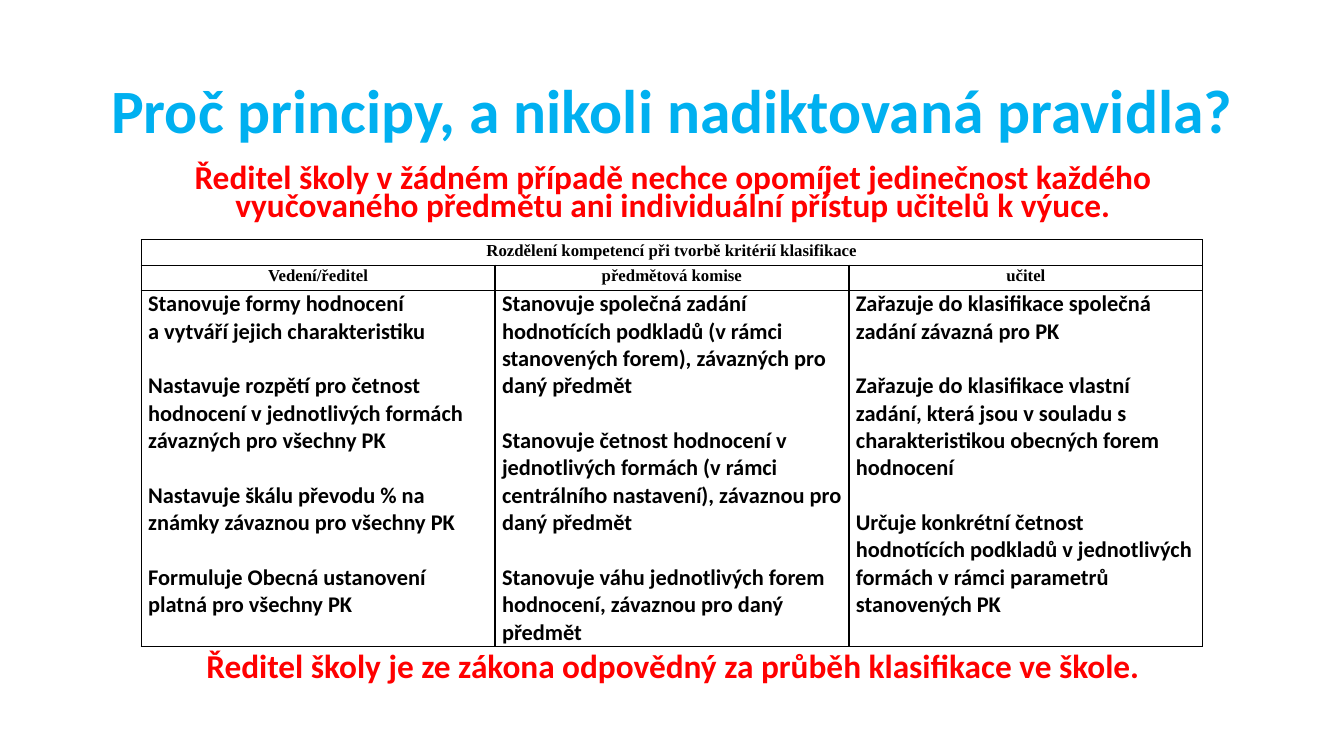
from lxml.etree import SubElement
from pptx import Presentation
from pptx.dml.color import RGBColor
from pptx.enum.text import MSO_ANCHOR, PP_ALIGN
from pptx.oxml.ns import qn
from pptx.util import Inches, Pt

BLUE = RGBColor(0x00, 0xB0, 0xF0)
RED = RGBColor(0xFF, 0x00, 0x00)
BLACK = RGBColor(0x00, 0x00, 0x00)

TITLE = "Proč principy, a nikoli nadiktovaná pravidla?"
INTRO = ("Ředitel školy v žádném případě nechce opomíjet jedinečnost každého "
         "vyučovaného předmětu ani individuální přístup učitelů k výuce.")
CLOSE = "Ředitel školy je ze zákona odpovědný za průběh klasifikace ve škole."
CAPTION = "Rozdělení kompetencí při tvorbě kritérií klasifikace"
ROLES = [
    ("Vedení/ředitel", [
        "Stanovuje formy hodnocení \va vytváří jejich charakteristiku",
        "Nastavuje rozpětí pro četnost hodnocení v jednotlivých formách závazných pro všechny PK",
        "Nastavuje škálu převodu % na známky závaznou pro všechny PK",
        "Formuluje Obecná ustanovení platná pro všechny PK",
    ]),
    ("předmětová komise", [
        "Stanovuje společná zadání hodnotících podkladů (v rámci stanovených forem), závazných pro daný předmět",
        "Stanovuje četnost hodnocení v jednotlivých formách (v rámci centrálního nastavení), závaznou pro daný předmět",
        "Stanovuje váhu jednotlivých forem hodnocení, závaznou pro daný předmět",
    ]),
    ("učitel", [
        "Zařazuje do klasifikace společná zadání závazná pro PK",
        "Zařazuje do klasifikace vlastní zadání, která jsou v souladu s charakteristikou obecných forem hodnocení",
        "Určuje konkrétní četnost hodnotících podkladů v jednotlivých formách v rámci parametrů stanovených PK",
    ]),
]

HEAD = ({"name": "Calibri", "size": Pt(44), "bold": True}, BLUE,
        {"alignment": PP_ALIGN.CENTER, "line_spacing": 0.9})
NOTE = ({"name": "Calibri", "size": Pt(23.8), "bold": True}, RED,
        {"alignment": PP_ALIGN.CENTER, "line_spacing": 0.7, "space_before": Pt(10)})
LABEL = ({"name": "Times New Roman", "size": Pt(12), "bold": True}, BLACK,
         {"alignment": PP_ALIGN.CENTER, "line_spacing": 1.07})
DUTY = ({"name": "Calibri", "size": Pt(16), "bold": True}, BLACK,
        {"alignment": PP_ALIGN.LEFT})
GAP = Pt(19.5)

LEFT, WIDTH = 0.92, 11.5
BOXES = [
    (TITLE, HEAD, 0.4, 1.45, MSO_ANCHOR.MIDDLE),
    (INTRO, NOTE, 1.61, 0.75, MSO_ANCHOR.TOP),
    (CLOSE, NOTE, 6.46, 0.5, MSO_ANCHOR.TOP),
]
ROWS = [0.25, 0.25, 3.53]
COL = 3.51


def assign(item, values):
    for key, value in values.items():
        setattr(item, key, value)


def write(frame, lines, style):
    font, color, layout = style
    frame.word_wrap = True
    for i, line in enumerate(lines):
        para = frame.add_paragraph() if i else frame.paragraphs[0]
        para.text = line
        assign(para, layout)
        if i:
            para.space_before = GAP
        for run in para.runs:
            assign(run.font, font)
            run.font.color.rgb = color


def border(cell):
    props = cell._tc.get_or_add_tcPr()
    for i, side in enumerate(("a:lnL", "a:lnR", "a:lnT", "a:lnB")):
        line = props.makeelement(qn(side), {"w": str(Pt(1))})
        fill = SubElement(line, qn("a:solidFill"))
        SubElement(fill, qn("a:srgbClr"), val=str(BLACK))
        props.insert(i, line)


def fill(cell, lines, style):
    assign(cell, {"margin_left": Inches(0.07), "margin_right": Inches(0.07),
                  "margin_top": 0, "margin_bottom": 0})
    write(cell.text_frame, lines, style)


def main():
    deck = Presentation()
    assign(deck, {"slide_width": Inches(13.33), "slide_height": Inches(7.5)})
    slide = deck.slides.add_slide(deck.slide_layouts[6])

    for text, style, top, height, anchor in BOXES:
        box = slide.shapes.add_textbox(
            Inches(LEFT), Inches(top), Inches(WIDTH), Inches(height))
        box.text_frame.vertical_anchor = anchor
        write(box.text_frame, [text], style)

    table = slide.shapes.add_table(
        len(ROWS), len(ROLES), Inches(1.4), Inches(2.38),
        Inches(COL * len(ROLES)), Inches(sum(ROWS))).table
    assign(table, {"first_row": False, "horz_banding": False})
    for row, height in zip(table.rows, ROWS):
        row.height = Inches(height)
    for col in table.columns:
        col.width = Inches(COL)
    for cell in table.iter_cells():
        cell.fill.background()
        border(cell)

    table.cell(0, 0).merge(table.cell(0, len(ROLES) - 1))
    fill(table.cell(0, 0), [CAPTION], LABEL)
    for i, (role, duties) in enumerate(ROLES):
        fill(table.cell(1, i), [role], LABEL)
        fill(table.cell(2, i), duties, DUTY)

    deck.save("out.pptx")


if __name__ == "__main__":
    main()
